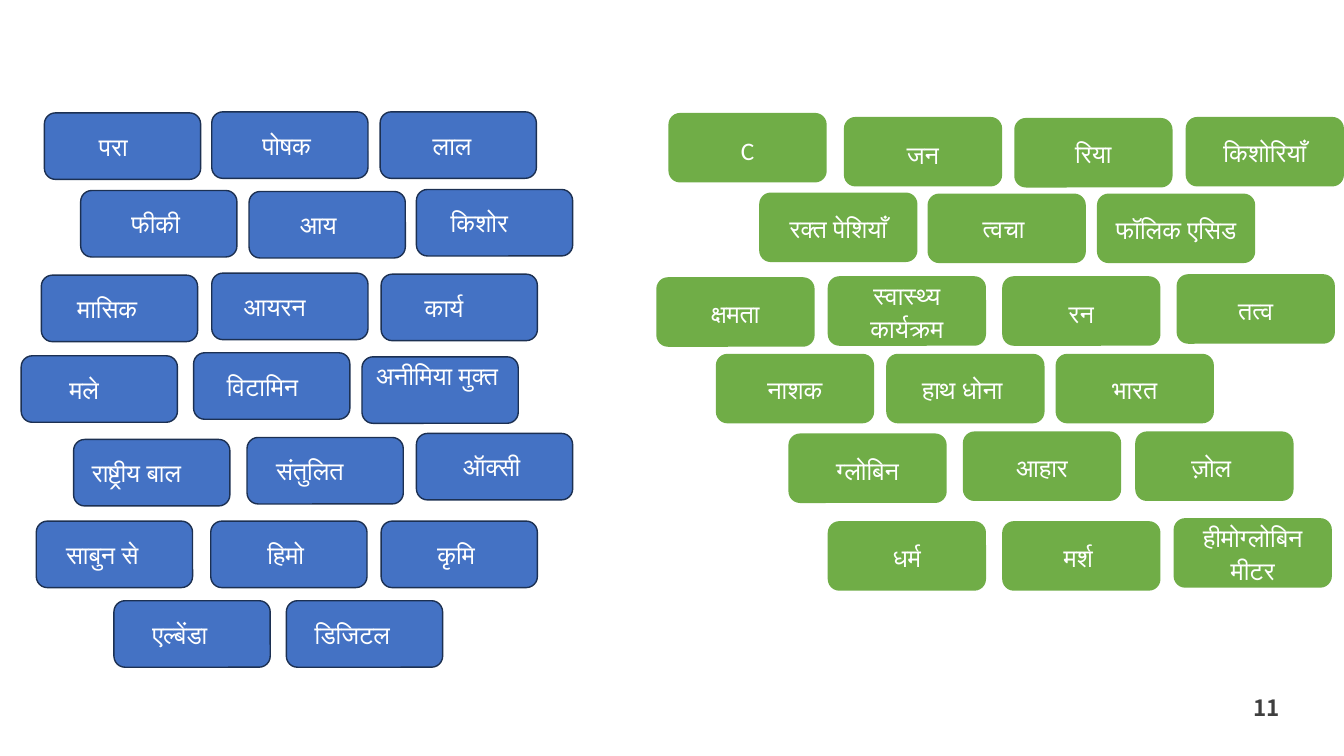
from pptx import Presentation
from pptx.dml.color import RGBColor
from pptx.enum.shapes import MSO_SHAPE as SHAPE
from pptx.enum.text import MSO_ANCHOR as ANCHOR, PP_ALIGN as ALIGN
from pptx.util import Inches, Pt


def rgb(value):
    return RGBColor.from_string(value)


def write(box, text, size=18, font="Calibri", color="FFFFFF", bold=False,
          align=ALIGN.CENTER, anchor=ANCHOR.MIDDLE, spacing=1.0,
          insets=(0.1, 0.05, 0.1, 0.05)):
    frame = box.text_frame
    frame.word_wrap = True
    frame.vertical_anchor = anchor
    (frame.margin_left, frame.margin_top,
     frame.margin_right, frame.margin_bottom) = map(Inches, insets)
    paragraph = frame.paragraphs[0]
    paragraph.alignment = align
    paragraph.line_spacing = spacing
    run = paragraph.add_run()
    run.text = text
    run.font.size = Pt(size)
    run.font.name = font
    run.font.bold = bold
    run.font.color.rgb = rgb(color)


prs = Presentation()
prs.slide_width, prs.slide_height = Inches(13.33), Inches(7.5)
slide = prs.slides.add_slide(prs.slide_layouts[6])

# First halves of the words: left, top, text, leftward shift in steps
SHIFT_STEP = 0.06
first_halves = [
    (0.44, 1.12, "परा", 3), (2.1, 1.11, "पोषक", 1), (3.77, 1.11, "लाल", 2),
    (0.8, 1.89, "फीकी", 1), (2.47, 1.9, "आय", 3), (4.13, 1.88, "किशोर", 5),
    (0.41, 2.73, "मासिक", 4), (2.1, 2.71, "आयरन", 5), (3.78, 2.72, "कार्य", 5),
    (0.21, 3.53, "मले", 5), (1.92, 3.5, "विटामिन", 3), (3.59, 3.54, "अनीमिया मुक्त", 1),
    (0.73, 4.36, "राष्ट्रीय बाल", 5), (2.45, 4.34, "संतुलित", 5), (4.13, 4.3, "ऑक्सी", 1),
    (0.36, 5.17, "साबुन से", 4), (2.09, 5.17, "हिमो", 1), (3.78, 5.17, "कृमि", 1),
    (1.13, 5.96, "एल्बेंडा", 4), (2.84, 5.96, "डिजिटल", 4),
]
raised = {"अनीमिया मुक्त": 0.33}  # bottom inset of the tile with raised text

# Second halves: left, top, text, shift, format overrides
loose = {"spacing": 1.15}
second_halves = [
    (6.63, 1.12, "C", 0, loose), (8.37, 1.16, "जन", 0, loose),
    (10.06, 1.17, "रिया", 0, {}), (11.76, 1.16, "किशोरियाँ", 0, {}),
    (7.53, 1.91, "रक्त पेशियाँ", 0, {}), (9.2, 1.92, "त्वचा", 1, {"spacing": 1.0}),
    (10.88, 1.92, "फॉलिक एसिड", 0, {}),
    (6.51, 2.75, "क्षमता", 0, {}), (8.21, 2.74, "स्वास्थ्य कार्यक्रम", 0, {}),
    (9.94, 2.74, "रन", 0, loose), (11.67, 2.72, "तत्व", 0, {}),
    (7.1, 3.51, "नाशक", 0, {}), (8.79, 3.51, "हाथ धोना", 1, {"font": "Times New Roman"}),
    (10.47, 3.51, "भारत", 0, {}),
    (7.82, 4.3, "ग्लोबिन", 0, loose), (9.55, 4.28, "आहार", 0, {}),
    (11.26, 4.28, "ज़ोल", 1, {}),
    (8.21, 5.17, "धर्म", 0, {}), (9.94, 5.17, "मर्श", 1, {}),
    (11.64, 5.14, "हीमोग्लोबिन मीटर", 0, {}),
]

# Green tiles
for left, top, word, shift, overrides in second_halves:
    tile = slide.shapes.add_shape(SHAPE.ROUNDED_RECTANGLE, Inches(left), Inches(top),
                                  Inches(1.57), Inches(0.69))
    tile.shadow.inherit = False
    tile.fill.solid()
    tile.fill.fore_color.rgb = rgb("70AD47")
    tile.line.fill.background()
    insets = (0.1, 0.05, 0.1 + shift * SHIFT_STEP, 0.05)
    write(tile, word, insets=insets, **{"spacing": 1.07, **overrides})

# Blue tiles
for left, top, word, shift in first_halves:
    tile = slide.shapes.add_shape(SHAPE.ROUNDED_RECTANGLE, Inches(left), Inches(top),
                                  Inches(1.55), Inches(0.66))
    tile.shadow.inherit = False
    tile.fill.solid()
    tile.fill.fore_color.rgb = rgb("4472C4")
    tile.line.color.rgb = rgb("1C3052")
    tile.line.width = Pt(1)
    write(tile, word,
          insets=(0.1, 0.05, 0.1 + shift * SHIFT_STEP, raised.get(word, 0.05)))

# Page number
page_number = slide.shapes.add_textbox(Inches(11.5), Inches(6.75), Inches(1.31), Inches(0.5))
write(page_number, "11", size=16, font="Noto Sans CJK JP", color="3F3F3F", bold=True,
      align=ALIGN.RIGHT, anchor=ANCHOR.BOTTOM, insets=(0.12, 0.12, 0.12, 0.1))

prs.save("out.pptx")
